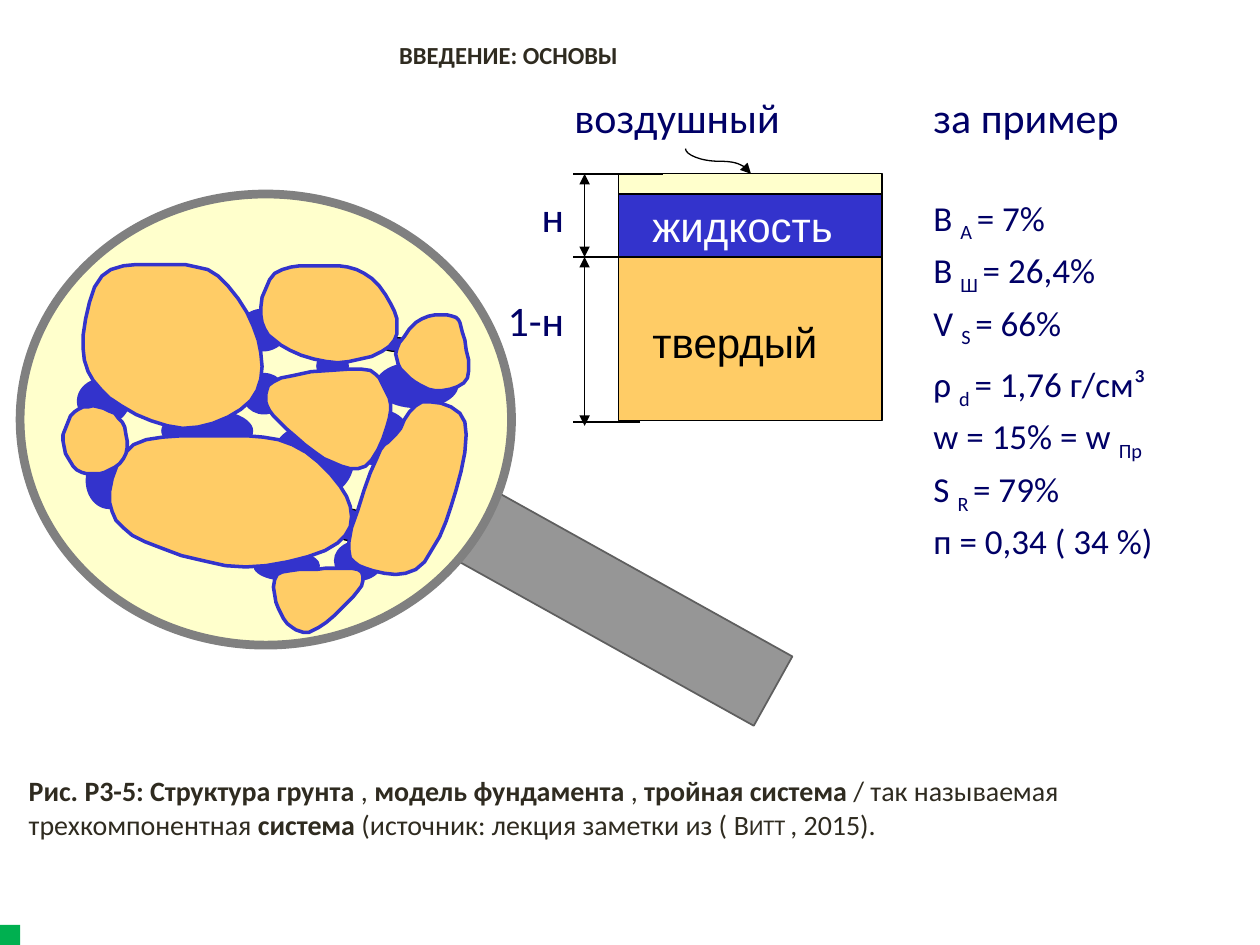
from pptx import Presentation
from pptx.dml.color import RGBColor
from pptx.enum.shapes import MSO_CONNECTOR as CONN, MSO_SHAPE as SHAPE
from pptx.enum.text import MSO_ANCHOR, PP_ALIGN
from pptx.oxml.ns import qn
from pptx.util import Inches, Pt
from lxml.etree import SubElement

prs = Presentation()
prs.slide_width, prs.slide_height = Inches(10), Inches(7.5)
shapes = prs.slides.add_slide(prs.slide_layouts[6]).shapes

U = prs.slide_width // 1000  # the slide is a grid of 1000 columns by 750 rows
NAVY, BROWN, BLUE, SAND, CREAM = "000066", "2F2B20", "3333CC", "FFCC66", "FFFFCC"
BLACK, WHITE = "000000", "FFFFFF"


def color(value):
    return RGBColor.from_string(value)


def style(s, fill=None, line=None, width=0.75):
    s.shadow.inherit = False
    for part, value in ((s.fill, fill), (s.line.fill, line)):
        if value:
            part.solid()
            part.fore_color.rgb = color(value)
        else:
            part.background()
    if line:
        s.line.width = Pt(width)


# Corner mark
mark = shapes.add_shape(SHAPE.RECTANGLE, 0, 734 * U, 16 * U, 16 * U)
style(mark, "00B050")

# Caption: bold and regular runs alternate
caption = shapes.add_textbox(13 * U, 609 * U, 1000 * U, 64 * U)
caption.text_frame.word_wrap = True
p = caption.text_frame.paragraphs[0]
p.font.size, p.font.name, p.font.color.rgb = Pt(16), "Calibri", color(BROWN)
for i, text in enumerate([
        "Рис. P3-5: Структура грунта ", ", ", "модель фундамента ", ", ",
        "тройная система ", "/ так называемая трехкомпонентная ", "система ",
        "(источник: лекция заметки из ( "]):
    r = p.add_run()
    r.text, r.font.bold = text, i % 2 == 0
r = p.add_run()
r.text = "Витт "
r.font._element.set("cap", "small")
p.add_run().text = ", 2015)."

# Example values: the part between bars is a subscript
example = shapes.add_textbox(731 * U, 68 * U, 239 * U, 357 * U)
tf = example.text_frame
tf.word_wrap = True
p = tf.paragraphs[0]
p.text = "за пример"
p.font.size, p.font.name, p.font.color.rgb = Pt(24), "Calibri", color(NAVY)
for formula, gap in [("В |А |= 7%", 28), ("В |Ш |= 26,4%", 0), ("V |S |= 66%", 0),
                     ("ρ |d |= 1,76 г/см³", 5), ("w = 15% = w |Пр", 0),
                     ("S |R |= 79%", 0), ("п = 0,34 ( 34 %)", 0)]:
    p = tf.add_paragraph()
    p.line_spacing, p.space_before = 1.1, Pt(gap)
    p.font.size, p.font.name, p.font.color.rgb = Pt(20), "Calibri", color(NAVY)
    for i, text in enumerate(formula.split("|")):
        r = p.add_run()
        r.text = text
        if i == 1:
            r.font._element.set("baseline", "-25000")

# Magnifier
handle = shapes.add_shape(SHAPE.RECTANGLE, 340 * U, 446 * U, 292 * U, 63 * U)
handle.rotation = 29.1
style(handle, "969696", "5F5F5F", 1)
lens = shapes.add_shape(SHAPE.OVAL, 16 * U, 154 * U, 390 * U, 358 * U)
style(lens, CREAM, "808080", 5)

# Three-phase column, stacked from the top down
top = 138
for height, fill in [(16, CREAM), (50, BLUE), (130, SAND)]:
    layer = shapes.add_shape(SHAPE.RECTANGLE, 491 * U, top * U, 209 * U, height * U)
    style(layer, fill, BLACK)
    top += height

# Dimension lines, extension lines and the pointer to the air layer
BOTH = ("headEnd", "tailEnd")
for kind, x1, y1, x2, y2, ends in [
        (CONN.STRAIGHT, 464, 204, 464, 338, BOTH),
        (CONN.STRAIGHT, 464, 204, 464, 138, BOTH),
        (CONN.STRAIGHT, 526, 138, 455, 138, ()),
        (CONN.STRAIGHT, 526, 204, 455, 204, ()),
        (CONN.STRAIGHT, 508, 335, 455, 335, ()),
        (CONN.CURVE, 560, 102, 580, 154, BOTH[1:])]:
    c = shapes.add_connector(kind, x1 * U, y1 * U, x2 * U, y2 * U)
    c.line.color.rgb, c.line.width = color(BLACK), Pt(0.75)
    for end in ends:
        SubElement(c.line._get_or_add_ln(), qn("a:" + end), type="triangle")
    props = c._element.spPr
    SubElement(props, qn("a:effectLst"))
    if kind == CONN.CURVE:
        xfrm = props.find(qn("a:xfrm"))
        xfrm.set("rot", str(270 * 60000))
        xfrm.set("flipH", "1")

# Labels
air = shapes.add_shape(SHAPE.LINE_CALLOUT_2_NO_BORDER, 446 * U, 68 * U, 195 * U, 50 * U)
style(air)
air.text_frame.vertical_anchor = MSO_ANCHOR.TOP
p = air.text_frame.paragraphs[0]
p.text, p.alignment = "воздушный", PP_ALIGN.LEFT
p.font.size, p.font.name, p.font.color.rgb = Pt(24), "Calibri", color(NAVY)

for x, y, w, h, text, size, font, ink in [
        (307, 27, 465, 34, "ВВЕДЕНИЕ: ОСНОВЫ", 14, "Calibri", BROWN),
        (420, 146, 62, 50, "н", 24, "Calibri", NAVY),
        (393, 229, 89, 50, "1-н", 24, "Calibri", NAVY),
        (508, 154, 186, 50, "жидкость", 24, "Arial", WHITE),
        (508, 246, 186, 50, "твердый", 24, "Arial", BLACK)]:
    s = shapes.add_textbox(x * U, y * U, w * U, h * U)
    s.text_frame.word_wrap = True
    p = s.text_frame.paragraphs[0]
    p.text = text
    p.font.size, p.font.name, p.font.bold = Pt(size), font, ink == BROWN
    p.font.color.rgb = color(ink)

# Pore water
for x, y, w, h, line in [
        (61, 300, 42, 37, None), (68, 359, 37, 45, None), (298, 287, 66, 37, None),
        (189, 245, 39, 34, None), (201, 437, 53, 24, None), (265, 429, 39, 32, None),
        (128, 325, 73, 34, None), (215, 336, 66, 60, None), (251, 279, 26, 23, None),
        (302, 268, 25, 11, BLACK), (277, 325, 49, 45, None),
        (192, 296, 35, 33, None), (264, 404, 27, 25, BLACK)]:
    water = shapes.add_shape(SHAPE.OVAL, x * U, y * U, w * U, h * U)
    style(water, BLUE, line)

# Soil grains: a closed Catmull-Rom curve through a few outline points
STEPS = 5
for knots in [
        [(81, 219), (66, 277), (87, 316), (145, 340), (199, 318), (205, 270), (173, 219), (128, 210)],
        [(218, 217), (207, 250), (223, 274), (268, 288), (309, 275), (313, 247), (289, 217), (254, 211)],
        [(287, 293), (223, 300), (211, 316), (221, 334), (257, 364), (290, 370), (309, 332), (305, 308)],
        [(106, 353), (87, 399), (115, 430), (195, 450), (268, 431), (275, 394), (232, 353), (171, 346)],
        [(78, 323), (97, 335), (100, 360), (83, 375), (61, 373), (50, 350), (59, 327)],
        [(253, 498), (284, 469), (284, 452), (251, 452), (220, 456), (221, 483), (235, 500)],
        [(335, 319), (314, 345), (299, 364), (277, 430), (290, 451), (330, 452), (358, 402), (369, 335)],
        [(335, 253), (315, 277), (321, 296), (345, 310), (371, 300), (367, 264), (359, 251)]]:
    outline = []
    for i in range(len(knots)):
        quads = zip(*(knots[(i + k) % len(knots)] for k in range(4)))
        axes = [(b, (c - a) / 2, a - 2.5 * b + 2 * c - d / 2, (d - a + 3 * (b - c)) / 2)
                for a, b, c, d in quads]
        for t in (n / STEPS for n in range(STEPS)):
            outline.append([f + t * (g + t * (h + t * k)) for f, g, h, k in axes])
    builder = shapes.build_freeform(*outline[0], scale=U)
    builder.add_line_segments(outline[1:], close=True)
    style(builder.convert_to_shape(), SAND, BLUE, 2)

prs.save("out.pptx")
